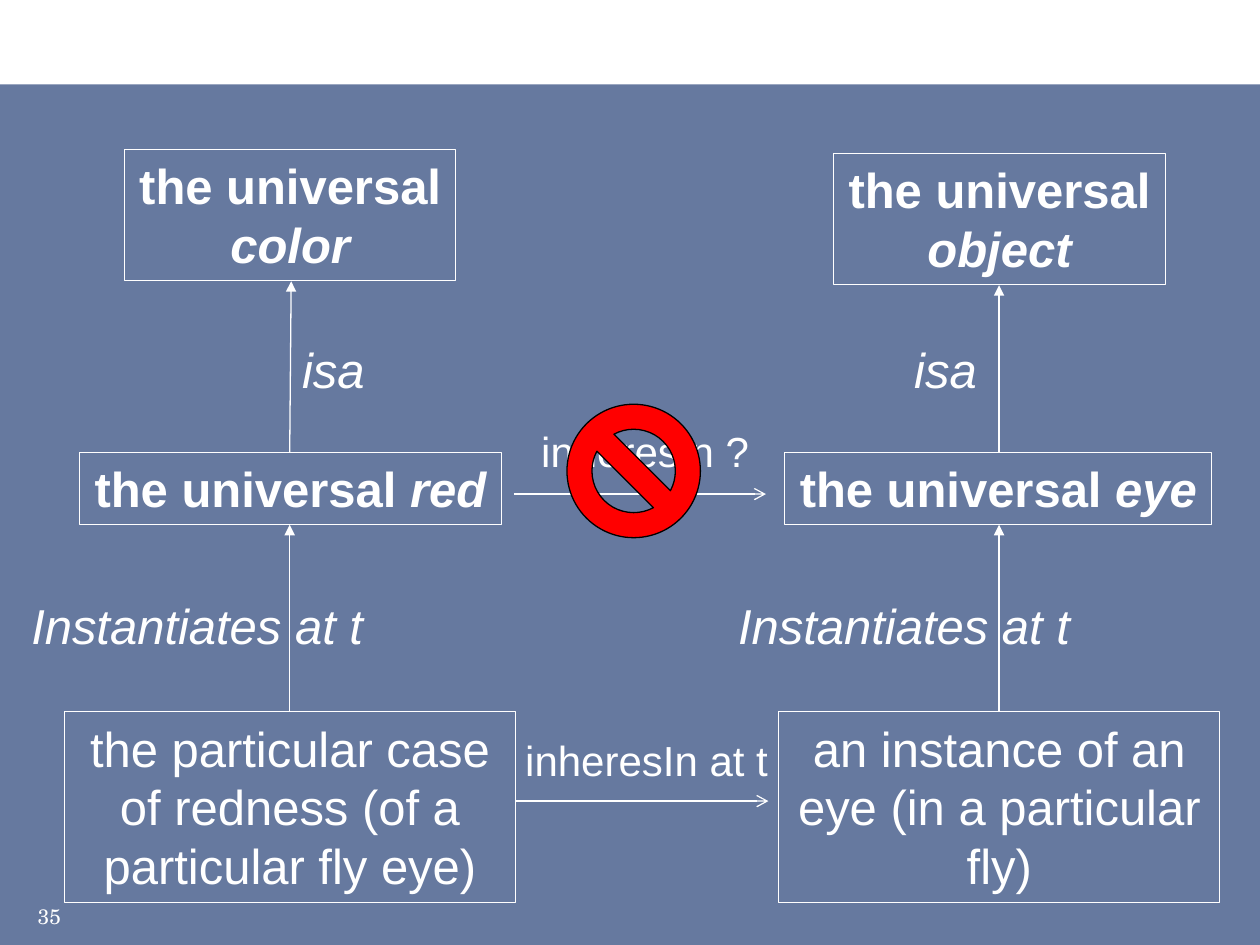
from lxml import etree
from pptx import Presentation
from pptx.dml.color import RGBColor
from pptx.enum.shapes import MSO_CONNECTOR, MSO_SHAPE
from pptx.enum.text import MSO_ANCHOR, PP_ALIGN
from pptx.oxml.ns import qn
from pptx.util import Cm, Pt

WHITE = RGBColor(0xFF, 0xFF, 0xFF)
BLACK = RGBColor(0, 0, 0)
NAVY = RGBColor(0x00, 0x20, 0x60)
RED = RGBColor(0xFF, 0, 0)
CENTER, RIGHT = PP_ALIGN.CENTER, PP_ALIGN.RIGHT
BOTTOM = MSO_ANCHOR.BOTTOM
STRAIGHT = MSO_CONNECTOR.STRAIGHT
RECTANGLE, NO_SYMBOL = MSO_SHAPE.RECTANGLE, MSO_SHAPE.NO_SYMBOL

presentation = Presentation()
presentation.slide_width, presentation.slide_height = Cm(25.4), Cm(19.05)
slide = presentation.slides.add_slide(presentation.slide_layouts[6])


def add_text(position, lines, size=28, bold=False, italic=False, wrap=True, framed=False):
    """Add a text box; each line is a list of (text, italic) runs or a string."""
    box = slide.shapes.add_textbox(*(Cm(value) for value in position))
    if framed:
        box.line.color.rgb = WHITE
        box.line.width = Pt(0.75)
    frame = box.text_frame
    frame.word_wrap = wrap
    for index, line in enumerate(lines):
        paragraph = frame.add_paragraph() if index else frame.paragraphs[0]
        paragraph.alignment = CENTER
        font = paragraph.font
        font.name, font.size, font.color.rgb = "Arial", Pt(size), WHITE
        font.bold = bold
        runs = [(line, italic)] if isinstance(line, str) else line
        for text, slanted in runs:
            run = paragraph.add_run()
            run.text = text
            run.font.italic = slanted
    return box


def add_arrow(start_x, start_y, end_x, end_y, head):
    ends = (Cm(value) for value in (start_x, start_y, end_x, end_y))
    arrow = slide.shapes.add_connector(STRAIGHT, *ends)
    arrow.line.color.rgb = WHITE
    arrow.line.width = Pt(0.75)
    etree.SubElement(arrow.line._get_or_add_ln(), qn("a:tailEnd"), type=head)
    etree.SubElement(arrow._element.spPr, qn("a:effectLst"))


# Translucent background panel
panel = slide.shapes.add_shape(RECTANGLE, 0, Cm(1.7), Cm(25.4), Cm(17.35))
panel.shadow.inherit = False
panel.fill.solid()
panel.fill.fore_color.rgb = NAVY
panel.line.fill.background()
color = panel._element.spPr.find(qn("a:solidFill"))[0]
etree.SubElement(color, qn("a:alpha"), val="60000")

# Two columns: general universal, specific universal, instance
# (top box, middle box, instance box, "isa" left, "Instantiates" left)
columns = [
    ("color", (2.51, 3.02), "red", (1.6, 8.51),
     "the particular case of redness (of a particular fly eye)", (1.3, 9.09),
     5.82, 0.33, 5.84, 5.87),
    ("object", (16.81, 3.1), "eye", (15.82, 8.61),
     "an instance of an eye (in a particular fly)", (15.7, 8.89),
     18.16, 14.58, 20.14, 20.14),
]
for (general, (general_left, general_top), specific, (specific_left, specific_width),
     instance, (instance_left, instance_width),
     isa_left, instantiates_left, arrow_x, arrow_end_x) in columns:
    add_text((instance_left, 14.35, instance_width, 3.84), [instance], framed=True)
    add_text((specific_left, 9.12, specific_width, 1.45),
             [[("the universal ", False), (specific, True)]],
             bold=True, wrap=False, framed=True)
    add_text((general_left, general_top, 6.68, 2.64),
             ["the universal", [(general, True)]],
             bold=True, wrap=False, framed=True)
    add_text((instantiates_left, 11.89, 7.29, 1.45), ["Instantiates at t"],
             italic=True, wrap=False)
    add_text((isa_left, 6.71, 1.8, 1.45), ["isa"], italic=True, wrap=False)
    add_arrow(arrow_x, 14.35, arrow_x, 10.58, "triangle")
    add_arrow(arrow_x, 9.12, arrow_end_x, general_top + 2.65, "triangle")

# Relations between the columns
for label, label_left, label_top, arrow_left, arrow_y in [
    ("inheresIn ?", 10.16, 8.46, 10.36, 9.96),
    ("inheresIn at t", 10.19, 14.68, 10.41, 16.15),
]:
    add_arrow(arrow_left, arrow_y, arrow_left + 5.08, arrow_y, "arrow")
    add_text((label_left, label_top, 5.69, 1.27), [label], size=24)

# Prohibition sign over the upper relation
sign = slide.shapes.add_shape(NO_SYMBOL, Cm(11.43), Cm(8.15), Cm(2.69), Cm(2.69))
sign.shadow.inherit = False
sign.fill.solid()
sign.fill.fore_color.rgb = RED
sign.line.color.rgb = BLACK
sign.line.width = Pt(0.75)

# Slide number
number = add_text((0.08, 17.98, 1.4, 0.86), ["35"], size=12)
number.text_frame.vertical_anchor = BOTTOM
number.text_frame.paragraphs[0].alignment = RIGHT
number.text_frame.paragraphs[0].font.name = "TeX Gyre Schola"

presentation.save("out.pptx")
